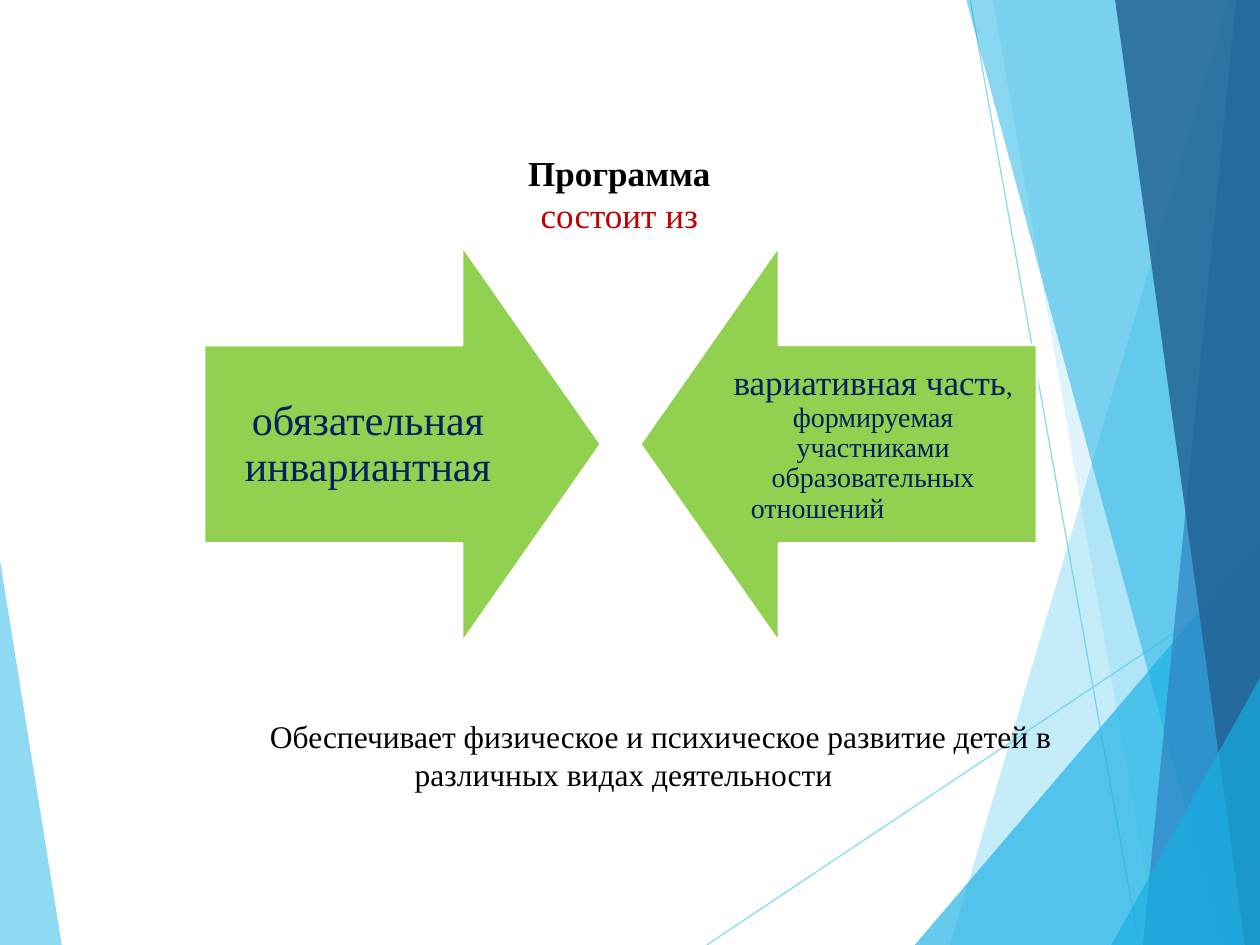
import pptx
import pptx.dml.color
import pptx.enum.shapes
import pptx.enum.text
import pptx.oxml
import pptx.oxml.ns
import pptx.util
from pptx.util import Inches

RGBColor = pptx.dml.color.RGBColor
ALIGN = pptx.enum.text.PP_ALIGN
ANCHOR = pptx.enum.text.MSO_ANCHOR

SKY = RGBColor(0x5F, 0xCB, 0xEF)
CYAN = RGBColor(0x17, 0xB0, 0xE4)
BLUE = RGBColor(0x2E, 0x83, 0xC3)
DEEP_BLUE = RGBColor(0x22, 0x62, 0x92)
GREEN = RGBColor(0x92, 0xD0, 0x50)
NAVY = RGBColor(0x00, 0x20, 0x60)
RED = RGBColor(0xC0, 0x00, 0x00)
BLACK = RGBColor(0, 0, 0)
WHITE = RGBColor(0xFF, 0xFF, 0xFF)

FONT = "Times New Roman"
WIDTH, HEIGHT = 10, 7.5

LEFT_WEDGE = ([(0, 4.45), (0.49, HEIGHT), (0, HEIGHT)], SKY, 70)
RAYS = [((5.61, HEIGHT), (WIDTH, 4.57)), ((7.7, 0), (9.04, HEIGHT))]
RIGHT_FACETS = [
    ([(9.75, 0), (7.54, HEIGHT), (WIDTH, HEIGHT), (WIDTH, 0)], SKY, 36),
    ([(7.88, 0), (9.19, HEIGHT), (WIDTH, HEIGHT), (WIDTH, 0)], SKY, 20),
    ([(7.26, HEIGHT), (WIDTH, 4.29), (WIDTH, HEIGHT)], CYAN, 66),
    ([(7.67, 0), (9.7, HEIGHT), (WIDTH, HEIGHT), (WIDTH, 0)], CYAN, 50),
    ([(9.81, 0), (9.07, HEIGHT), (WIDTH, HEIGHT), (WIDTH, 0)], BLUE, 70),
    ([(8.85, 0), (9.88, HEIGHT), (WIDTH, HEIGHT), (WIDTH, 0)], DEEP_BLUE, 82),
    ([(8.82, HEIGHT), (WIDTH, 5.38), (WIDTH, HEIGHT)], CYAN, 66),
]


def set_opacity(shape, percent):
    """Apply an alpha value to every solid colour of the shape."""
    for color in shape._element.spPr.iter(pptx.oxml.ns.qn("a:srgbClr")):
        alpha = pptx.oxml.parse_xml(f'<a:alpha {pptx.oxml.ns.nsdecls("a")} val="{percent * 1000}"/>')
        color.append(alpha)


def add_facet(slide, points, color, opacity):
    corners = [(Inches(x), Inches(y)) for x, y in points]
    builder = slide.shapes.build_freeform(*corners[0])
    builder.add_line_segments(corners[1:], close=True)
    facet = builder.convert_to_shape()
    facet.shadow.inherit = False
    facet.fill.solid()
    facet.fill.fore_color.rgb = color
    facet.line.fill.background()
    set_opacity(facet, opacity)


def add_ray(slide, start, end):
    ends = [Inches(value) for value in start + end]
    ray = slide.shapes.add_connector(pptx.enum.shapes.MSO_CONNECTOR.STRAIGHT, *ends)
    ray.line.color.rgb = SKY
    ray.line.width = pptx.util.Pt(0.75)
    set_opacity(ray, 70)
    ray._element.spPr.append(pptx.oxml.parse_xml(f'<a:effectLst {pptx.oxml.ns.nsdecls("a")}/>'))


def add_arrow(slide, left, rotation):
    size = Inches(3.15)
    arrow = slide.shapes.add_shape(
        pptx.enum.shapes.MSO_SHAPE.DOWN_ARROW, Inches(left), Inches(1.95), size, size)
    arrow.rotation = rotation
    arrow.adjustments[0] = 0.5
    arrow.adjustments[1] = 0.35
    arrow.shadow.inherit = False
    arrow.fill.solid()
    arrow.fill.fore_color.rgb = GREEN
    arrow.line.color.rgb = WHITE
    arrow.line.width = pptx.util.Pt(1.5)


def add_text_box(slide, left, top, width, height, anchor=ANCHOR.TOP, inset=None):
    frame = slide.shapes.add_textbox(
        Inches(left), Inches(top), Inches(width), Inches(height)).text_frame
    frame.word_wrap = True
    frame.vertical_anchor = anchor
    if inset is not None:
        frame.margin_left = frame.margin_right = Inches(inset)
        frame.margin_top = frame.margin_bottom = Inches(inset)
    return frame


def format_paragraph(paragraph, size, color, bold=False, spacing=1.0, align=ALIGN.CENTER):
    paragraph.alignment = align
    paragraph.line_spacing = spacing
    paragraph.space_before = paragraph.space_after = pptx.util.Pt(0)
    font = paragraph.font
    font.name, font.bold = FONT, bold
    font.size = pptx.util.Pt(size)
    font.color.rgb = color


def fill_title(slide):
    title = slide.shapes.title
    title.left, title.top = Inches(4.04), Inches(1.15)
    title.width, title.height = Inches(1.75), Inches(0.77)
    frame = title.text_frame
    frame.auto_size = pptx.enum.text.MSO_AUTO_SIZE.NONE
    frame.vertical_anchor = ANCHOR.TOP
    frame.text = "Программа\nсостоит из"
    first, second = frame.paragraphs
    format_paragraph(first, 20, BLACK, bold=True)
    format_paragraph(second, 20, RED)


def add_mandatory_part(slide):
    frame = add_text_box(slide, 1.62, 2.74, 2.6, 1.58, ANCHOR.MIDDLE, 0.19)
    frame.text = "обязательная инвариантная"
    format_paragraph(frame.paragraphs[0], 24, NAVY, spacing=0.9)


def add_variable_part(slide):
    frame = add_text_box(slide, 5.63, 2.74, 2.6, 1.58, ANCHOR.MIDDLE, 0.16)
    centred = frame.paragraphs[0]
    format_paragraph(centred, 16, NAVY, spacing=0.9)
    for text, size in (("вариативная часть", 20), (", ", 15),
                       ("формируемая участниками образовательных", 16)):
        run = centred.add_run()
        run.text = text
        run.font.size = pptx.util.Pt(size)
    last_line = frame.add_paragraph()
    last_line.text = "отношений"
    format_paragraph(last_line, 16, NAVY, spacing=0.9, align=ALIGN.LEFT)
    last_line._p.get_or_add_pPr().set("marL", str(Inches(0.17)))


def add_conclusion(slide):
    frame = add_text_box(slide, 1.17, 5.64, 7.56, 0.71)
    frame.text = "Обеспечивает физическое и психическое развитие детей в различных видах деятельности"
    paragraph = frame.paragraphs[0]
    format_paragraph(paragraph, 18, BLACK)
    paragraph._p.get_or_add_pPr().set("indent", str(Inches(0.59)))


def main():
    presentation = pptx.Presentation()
    presentation.slide_width, presentation.slide_height = Inches(WIDTH), Inches(HEIGHT)
    slide = presentation.slides.add_slide(presentation.slide_layouts.get_by_name("Title Only"))
    fill_title(slide)
    add_facet(slide, *LEFT_WEDGE)
    for start, end in RAYS:
        add_ray(slide, start, end)
    for facet in RIGHT_FACETS:
        add_facet(slide, *facet)
    add_conclusion(slide)
    add_arrow(slide, 1.62, 270)
    add_mandatory_part(slide)
    add_arrow(slide, 5.08, 90)
    add_variable_part(slide)
    presentation.save("out.pptx")


if __name__ == "__main__":
    main()
